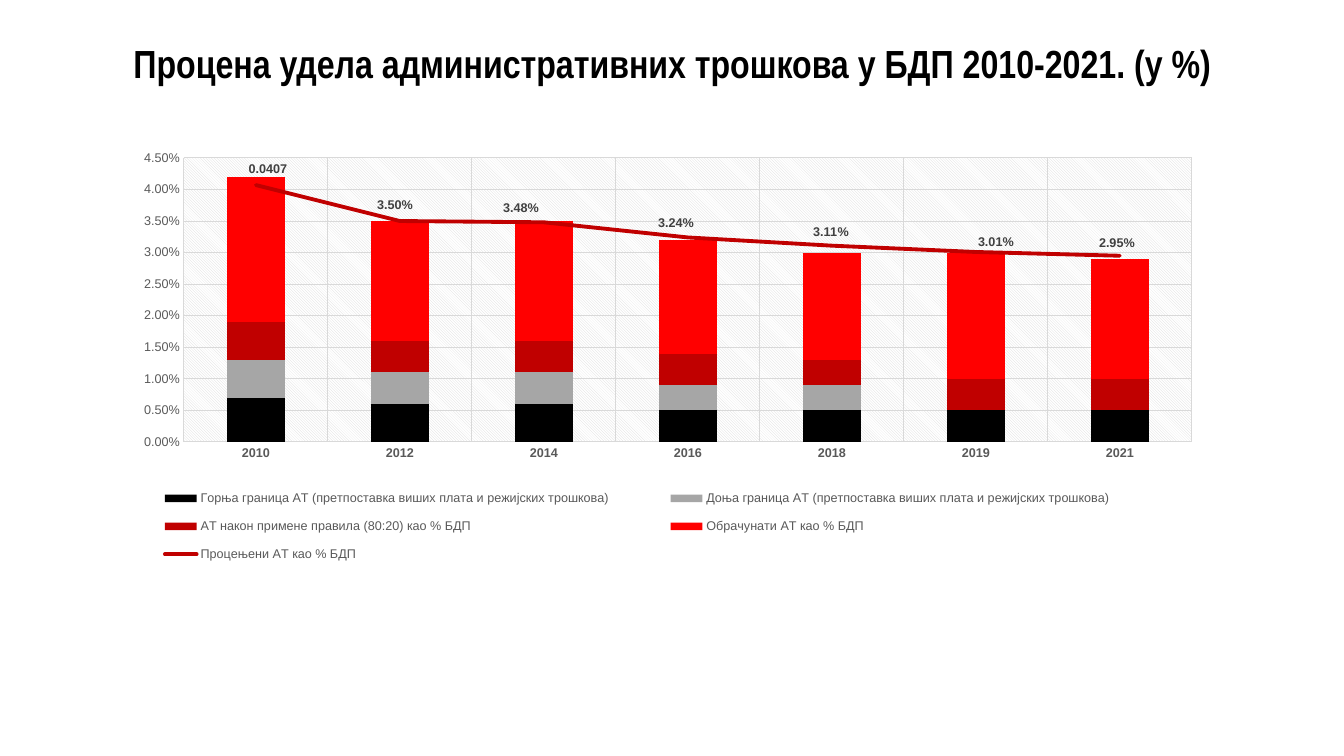
import pptx
import pptx.chart.data
import pptx.dml.color
import pptx.enum.chart
import pptx.enum.text
import pptx.oxml
import pptx.oxml.ns
import pptx.util

PX = 9071  # EMU in one px (100.8 px to the inch)
COLORS = {"black": "000000", "gray": "A6A6A6", "dark_red": "C00000", "red": "FF0000",
          "grid": "D9D9D9", "axis_text": "595959", "label_text": "404040", "white": "FFFFFF"}
CHART_LEFT, CHART_TOP, CHART_WIDTH, CHART_HEIGHT = 106, 121, 1112, 469

YEARS = ["2010", "2012", "2014", "2016", "2018", "2019", "2021"]
COST_LAYERS = [
    ("Горња граница АТ (претпоставка виших плата и режијских трошкова)", "black",
     [0.007, 0.006, 0.006, 0.005, 0.005, 0.005, 0.005]),
    ("Доња граница АТ (претпоставка виших плата и режијских трошкова)", "gray",
     [0.006, 0.005, 0.005, 0.004, 0.004, 0, None]),
    ("АТ након примене правила (80:20) као % БДП", "dark_red",
     [0.006, 0.005, 0.005, 0.005, 0.004, 0.005, 0.005]),
    ("Обрачунати АТ као % БДП", "red",
     [0.023, 0.019, 0.019, 0.018, 0.017, 0.02, 0.019]),
]
ESTIMATE_NAME = "Процењени АТ као % БДП"
ESTIMATE = [0.0407, 0.035, 0.0348, 0.0324, 0.0311, 0.0301, 0.0295]
LABEL_SHIFTS = [(12, -4), (-5, -4), (-23, -3), (-12, -3), (-1, -2), (20, 2), (-3, -1)]


def px(length):
    return pptx.util.Emu(length * PX)


def rgb(name):
    return pptx.dml.color.RGBColor.from_string(COLORS[name])


def style_font(font, size, color, bold=False, name="Arial"):
    font.size = pptx.util.Pt(size)
    font.bold = bold
    font.name = name
    font.color.rgb = rgb(color)


def style_line(line, color, width):
    line.color.rgb = rgb(color)
    line.width = pptx.util.Pt(width)


def chart_xml(markup):
    return pptx.oxml.parse_xml(markup.replace(">", " " + pptx.oxml.ns.nsdecls("c", "a") + ">", 1))


def layout_xml(x, y, width=None, height=None, target=""):
    """Manual layout from px lengths, as shares of the chart."""
    parts = f'<c:layoutTarget val="{target}"/>' if target else ""
    if width:
        parts += '<c:xMode val="edge"/><c:yMode val="edge"/>'
    lengths = [("x", x, CHART_WIDTH), ("y", y, CHART_HEIGHT)]
    if width:
        lengths += [("w", width, CHART_WIDTH), ("h", height, CHART_HEIGHT)]
    parts += "".join(f'<c:{tag} val="{length / whole:.4f}"/>' for tag, length, whole in lengths)
    return chart_xml(f"<c:layout><c:manualLayout>{parts}</c:manualLayout></c:layout>")


def add_text(slide, left, top, width, height, text, *, size, color, bold, name, align):
    frame = slide.shapes.add_textbox(px(left), px(top), px(width), px(height)).text_frame
    frame.word_wrap = True
    frame.margin_left = frame.margin_right = frame.margin_top = frame.margin_bottom = 0
    paragraph = frame.paragraphs[0]
    paragraph.alignment = align
    run = paragraph.add_run()
    run.text = text
    style_font(run.font, size, color, bold, name)


def style_axis(axis, bold=False):
    axis.major_tick_mark = axis.minor_tick_mark = pptx.enum.chart.XL_TICK_MARK.NONE
    axis.has_major_gridlines = True
    style_line(axis.major_gridlines.format.line, "grid", 0.75)
    style_font(axis.tick_labels.font, 9, "axis_text", bold)


def move_last_series_to_line(chart):
    columns = chart.plots[0]._element
    series = columns.findall(pptx.oxml.ns.qn("c:ser"))[-1]
    for invert in series.findall(pptx.oxml.ns.qn("c:invertIfNegative")):
        series.remove(invert)
    axis_ids = "".join(f'<c:axId val="{axis.get("val")}"/>'
                       for axis in columns.findall(pptx.oxml.ns.qn("c:axId")))
    line_plot = chart_xml('<c:lineChart><c:grouping val="standard"/><c:varyColors val="0"/>'
                          f'<c:marker val="1"/>{axis_ids}</c:lineChart>')
    line_plot.insert(2, series)
    columns.addnext(line_plot)


def style_estimate(series):
    style_line(series.format.line, "dark_red", 2.75)
    series.format.line._ln.set("cap", "rnd")
    series.marker.style = pptx.enum.chart.XL_MARKER_STYLE.NONE
    series.smooth = False
    above = pptx.enum.chart.XL_LABEL_POSITION.ABOVE
    labels = series.data_labels
    labels.show_value = True
    labels.number_format = "0.00%"
    labels.number_format_is_linked = False
    labels.position = above
    style_font(labels.font, 9, "label_text", True)
    for index, shift in enumerate(LABEL_SHIFTS):
        label = series.points[index].data_label
        if index == 0:  # the first label is plain text
            run = label.text_frame.paragraphs[0].add_run()
            run.text = "0.0407"
            style_font(run.font, 9, "label_text", True)
        else:
            style_font(label.font, 9, "label_text", True)
        label.position = above
        label._dLbl.find(pptx.oxml.ns.qn("c:idx")).addnext(layout_xml(*shift))


def style_plot_area(chart):
    plot_area = chart.element.find(".//" + pptx.oxml.ns.qn("c:plotArea"))
    for old in plot_area.findall(pptx.oxml.ns.qn("c:layout")):
        plot_area.remove(old)
    plot_area.insert(0, layout_xml(78, 37, 1008, 284, "inner"))
    plot_area.append(chart_xml(
        '<c:spPr><a:pattFill prst="ltDnDiag">'
        f'<a:fgClr><a:srgbClr val="{COLORS["grid"]}"/></a:fgClr>'
        f'<a:bgClr><a:srgbClr val="{COLORS["white"]}"/></a:bgClr>'
        '</a:pattFill><a:ln><a:noFill/></a:ln></c:spPr>'))


def add_legend(chart):
    chart.has_legend = True
    legend = chart.legend
    legend.position = pptx.enum.chart.XL_LEGEND_POSITION.BOTTOM
    legend.include_in_layout = False
    style_font(legend.font, 9, "axis_text")
    for old in legend._element.findall(pptx.oxml.ns.qn("c:layout")):
        legend._element.remove(old)
    legend._element.find(pptx.oxml.ns.qn("c:legendPos")).addnext(layout_xml(1, 357, 1060, 97))


def add_cost_chart(slide):
    data = pptx.chart.data.CategoryChartData(number_format="0.00%")
    data.categories = YEARS
    for name, _, shares in COST_LAYERS:
        data.add_series(name, shares)
    data.add_series(ESTIMATE_NAME, ESTIMATE)
    chart = slide.shapes.add_chart(
        pptx.enum.chart.XL_CHART_TYPE.COLUMN_STACKED, px(CHART_LEFT), px(CHART_TOP),
        px(CHART_WIDTH), px(CHART_HEIGHT), data).chart
    chart.has_title = False
    style_font(chart.font, 10, "black")

    # Stacked columns and the estimate line
    move_last_series_to_line(chart)
    columns, estimate = chart.plots
    columns.gap_width, columns.overlap = 150, 100
    columns.vary_by_categories = False
    for series, (_, color, _) in zip(columns.series, COST_LAYERS):
        series.format.fill.solid()
        series.format.fill.fore_color.rgb = rgb(color)
        series.invert_if_negative = False
    style_estimate(estimate.series[0])

    # Axes
    style_axis(chart.category_axis, bold=True)
    style_line(chart.category_axis.format.line, "grid", 0.75)
    shares_axis = chart.value_axis
    style_axis(shares_axis)
    shares_axis.format.line.fill.background()
    shares_axis.minimum_scale, shares_axis.maximum_scale = 0, 0.045
    shares_axis.major_unit = 0.005
    shares_axis.tick_labels.number_format = "0.00%"
    shares_axis.tick_labels.number_format_is_linked = False

    style_plot_area(chart)
    add_legend(chart)


def main():
    deck = pptx.Presentation()
    deck.slide_width, deck.slide_height = px(1344), px(756)
    slide = deck.slides.add_slide(deck.slide_layouts[6])
    # Title
    add_text(slide, 72, 39, 1200, 91,
             "Процена удела административних трошкова у БДП 2010-2021. (у %)",
             size=28, color="black", bold=True, name="Arial Narrow",
             align=pptx.enum.text.PP_ALIGN.CENTER)
    # Cost shares by year
    add_cost_chart(slide)
    deck.save("out.pptx")


if __name__ == "__main__":
    main()
